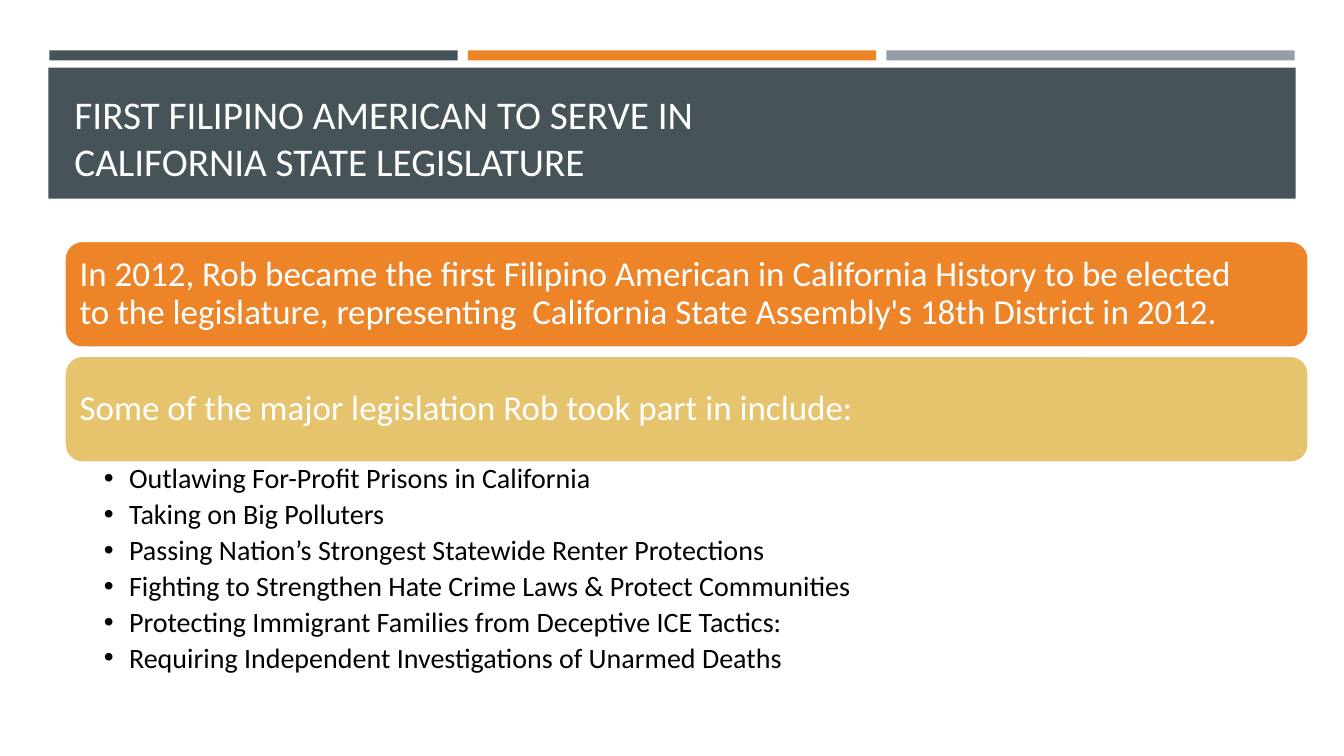
from dataclasses import dataclass

from lxml import etree
from pptx import Presentation
from pptx.dml.color import RGBColor
from pptx.enum.shapes import MSO_SHAPE
from pptx.enum.text import MSO_ANCHOR, PP_ALIGN
from pptx.oxml.ns import qn
from pptx.util import Pt

RECT, ROUND = MSO_SHAPE.RECTANGLE, MSO_SHAPE.ROUNDED_RECTANGLE
TOP, MIDDLE, BOTTOM = MSO_ANCHOR.TOP, MSO_ANCHOR.MIDDLE, MSO_ANCHOR.BOTTOM
LEFT = PP_ALIGN.LEFT
PX = 9144  # EMU per px, 100 px to the inch
FONT = "Calibri"
COLORS = {
    "slate": "465359",
    "orange": "ED8428",
    "gray": "969FA7",
    "gold": "E6C46D",
    "title": "FFFEFF",
    "white": "FFFFFF",
    "black": "000000",
}


@dataclass
class Box:
    left: int
    top: int
    width: int
    height: int


@dataclass
class Style:
    size: int
    color: str
    anchor: MSO_ANCHOR
    inset: tuple[int, int, int, int]  # left, top, right, bottom
    leading: float = 1.0
    after: int = 0
    bullet: bool = False


@dataclass
class Card:
    fill: str
    text: str


TITLE = Style(28, "title", BOTTOM, (10, 5, 10, 5))
CARD = Style(25, "white", MIDDLE, (10, 10, 60, 10), 0.9)
LIST = Style(20, "black", TOP, (39, 3, 19, 3), 0.9, 4, True)

HEADING = "FIRST FILIPINO AMERICAN TO SERVE IN\nCALIFORNIA STATE LEGISLATURE"
CARDS = [
    Card("orange", "In 2012, Rob became the first Filipino American in California "
         "History to be elected to the legislature, representing  California "
         "State Assembly's 18th District in 2012."),
    Card("gold", "Some of the major legislation Rob took part in include:"),
]
LAWS = [
    "Outlawing For-Profit Prisons in California",
    "Taking on Big Polluters",
    "Passing Nation’s Strongest Statewide Renter Protections",
    "Fighting to Strengthen Hate Crime Laws & Protect Communities",
    "Protecting Immigrant Families from Deceptive ICE Tactics:",
    "Requiring Independent Investigations of Unarmed Deaths",
]


def rgb(name: str) -> RGBColor:
    return RGBColor.from_string(COLORS[name])


def emu(box: Box) -> list[int]:
    return [n * PX for n in (box.left, box.top, box.width, box.height)]


def add_block(slide, kind: MSO_SHAPE, box: Box, fill: str, line: str = ""):
    shape = slide.shapes.add_shape(kind, *emu(box))
    shape.shadow.inherit = False
    shape.fill.solid()
    shape.fill.fore_color.rgb = rgb(fill)
    if line:
        shape.line.color.rgb = rgb(line)
        shape.line.width = Pt(1.75)
    else:
        shape.line.fill.background()
    return shape


def add_bullet(para) -> None:
    props = para._p.get_or_add_pPr()
    props.set("marL", str(25 * PX))
    props.set("indent", str(-25 * PX))
    etree.SubElement(props, qn("a:buFont")).set("typeface", "Arial")
    etree.SubElement(props, qn("a:buChar")).set("char", "•")


def write(frame, texts: list[str], style: Style) -> None:
    frame.word_wrap = True
    frame.vertical_anchor = style.anchor
    (frame.margin_left, frame.margin_top,
     frame.margin_right, frame.margin_bottom) = [n * PX for n in style.inset]
    for i, text in enumerate(texts):
        para = frame.add_paragraph() if i else frame.paragraphs[0]
        para.text = text
        para.alignment = LEFT
        para.line_spacing = style.leading
        para.space_after = Pt(style.after)
        para.font.name = FONT
        para.font.size = Pt(style.size)
        para.font.color.rgb = rgb(style.color)
        if style.bullet:
            add_bullet(para)


def add_text(slide, box: Box, texts: list[str], style: Style) -> None:
    write(slide.shapes.add_textbox(*emu(box)).text_frame, texts, style)


def main() -> None:
    deck = Presentation()
    deck.slide_width, deck.slide_height = 1333 * PX, 750 * PX
    slide = deck.slides.add_slide(deck.slide_layouts[6])

    for i, fill in enumerate(("slate", "orange", "gray")):
        add_block(slide, RECT, Box(49 + 415 * i, 50, 405, 10), fill)
    add_block(slide, RECT, Box(48, 67, 1237, 130), "slate")
    add_text(slide, Box(64, 77, 1206, 111), [HEADING], TITLE)

    for i, card in enumerate(CARDS):
        box = Box(64, 239 + 114 * i, 1234, 106)
        shape = add_block(slide, ROUND, box, card.fill, "white")
        write(shape.text_frame, [card.text], CARD)
    add_text(slide, Box(64, 458, 1234, 215), LAWS, LIST)

    deck.save("out.pptx")


if __name__ == "__main__":
    main()
